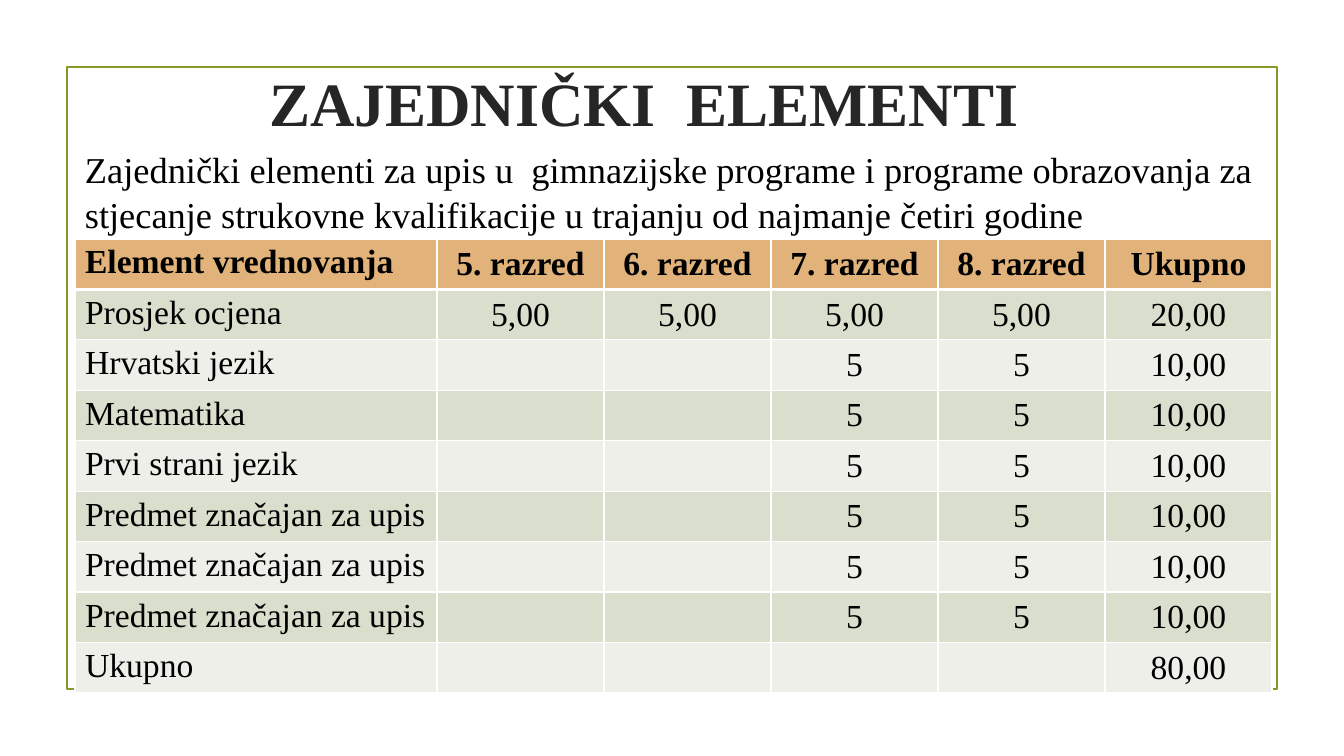
"""Builds the slide on the common elements of enrolment."""
from dataclasses import dataclass

from lxml.etree import SubElement
from pptx import Presentation
from pptx.dml.color import RGBColor
from pptx.enum.shapes import MSO_SHAPE
from pptx.enum.text import MSO_ANCHOR, PP_ALIGN
from pptx.oxml.ns import qn
from pptx.util import Pt


@dataclass
class Theme:
    face: str = "Times New Roman"
    frame: str = "83992A"
    title: str = "262626"
    text: str = "000000"
    rule: str = "FFFFFF"
    head: str = "E1B37A"
    bands: tuple = ("EDEFE8", "D9DECD")
    big: int = 44
    lead: int = 26
    cell: int = 24


theme = Theme()
PX = 914400 / 100.8


def px(*sizes):
    return [round(size * PX) for size in sizes]


def style(para, size, color, bold=False, align=PP_ALIGN.LEFT):
    para.alignment = align
    font = para.font
    font.name, font.size, font.bold = theme.face, Pt(size), bold
    font.color.rgb = RGBColor.from_string(color)


deck = Presentation()
deck.slide_width, deck.slide_height = px(1344, 756)
slide = deck.slides.add_slide(deck.slide_layouts[6])
shapes = slide.shapes

frame = shapes.add_shape(MSO_SHAPE.RECTANGLE, *px(67, 67, 1210, 622))
frame.shadow.inherit = False
frame.fill.background()
frame.line.color.rgb = RGBColor.from_string(theme.frame)
frame.line.width = Pt(1.25)

title = shapes.add_textbox(*px(75, 19, 1154, 166)).text_frame
title.word_wrap = True
title.vertical_anchor = MSO_ANCHOR.MIDDLE
title.text = "ZAJEDNIČKI  ELEMENTI "
style(title.paragraphs[0], theme.big, theme.title, True, PP_ALIGN.CENTER)

lead = shapes.add_textbox(*px(75, 140, 1211, 98)).text_frame
lead.word_wrap = True
lead.text = (
    "Zajednički elementi za upis u  gimnazijske programe i programe obrazovanja "
    "za stjecanje strukovne kvalifikacije u trajanju od najmanje četiri godine"
)
lead.paragraphs[0].line_spacing = 1.04
style(lead.paragraphs[0], theme.lead, theme.text)

marks = ["", "", "5", "5", "10,00"]
subjects = ["Hrvatski jezik", "Matematika", "Prvi strani jezik"]
subjects += ["Predmet značajan za upis"] * 3
rows = [
    ["Element vrednovanja"] + [f"{year}. razred" for year in range(5, 9)] + ["Ukupno"],
    ["Prosjek ocjena"] + ["5,00"] * 4 + ["20,00"],
    *[[name] + marks for name in subjects],
    ["Ukupno"] + [""] * 4 + ["80,00"],
]

high = 448
count = len(rows)
grid = shapes.add_table(count, 6, *px(75, 239, 1197, high)).table
grid.first_row = grid.horz_banding = False
for col, width in zip(grid.columns, px(362, *[167] * 5)):
    col.width = width

for i, row in enumerate(rows):
    top, base = px(i * high // count, (i + 1) * high // count)
    grid.rows[i].height = base - top
    fill = theme.bands[i % 2] if i else theme.head
    for j, text in enumerate(row):
        cell = grid.cell(i, j)
        cell.text = text
        if j:
            cell.vertical_anchor = MSO_ANCHOR.MIDDLE
        align = PP_ALIGN.CENTER if j else PP_ALIGN.LEFT
        style(cell.text_frame.paragraphs[0], theme.cell, theme.text, i == 0, align)
        for side in "LRTB":
            thick = (i, side) in ((0, "B"), (1, "T"))
            edge = SubElement(cell._tc.get_or_add_tcPr(), qn(f"a:ln{side}"))
            edge.set("w", str(Pt(3 if thick else 1)))
            paint = SubElement(edge, qn("a:solidFill"))
            SubElement(paint, qn("a:srgbClr")).set("val", theme.rule)
        cell.fill.solid()
        cell.fill.fore_color.rgb = RGBColor.from_string(fill)

deck.save("out.pptx")
